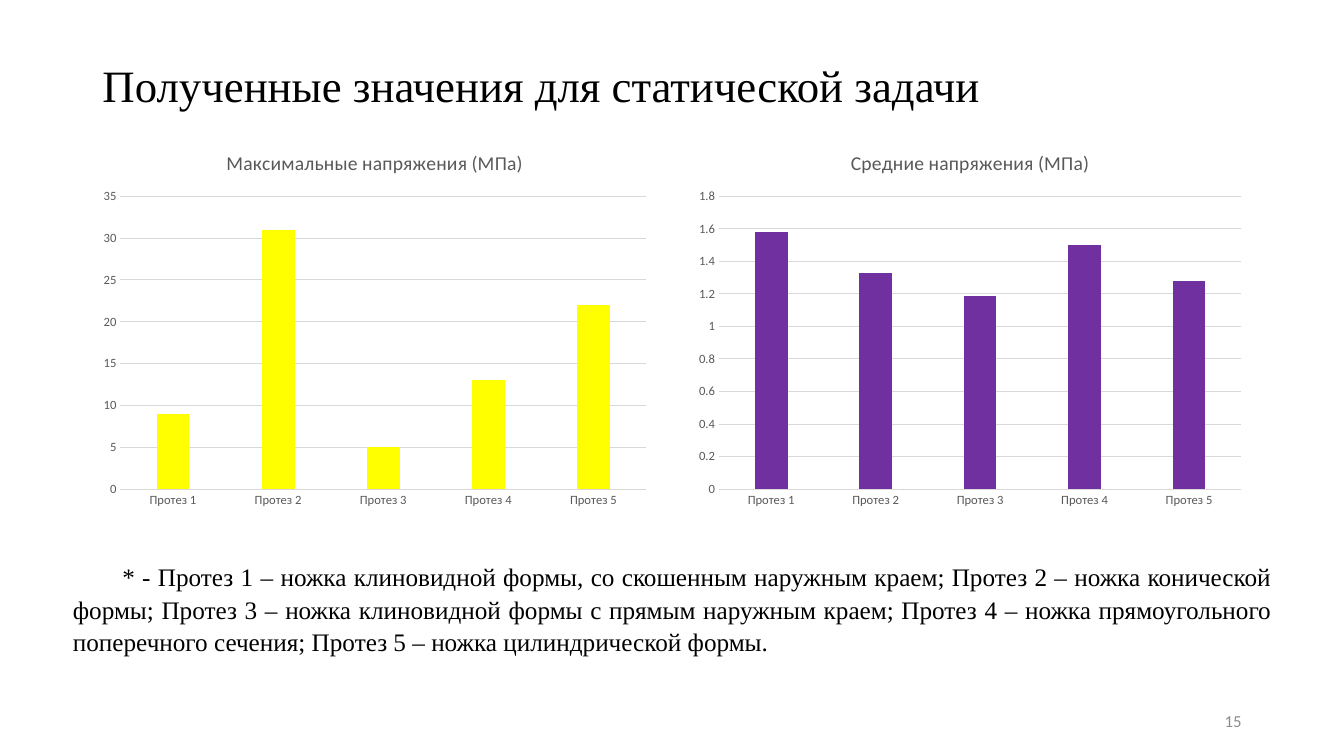
"""Build the slide with static stress results for five prostheses."""
from pptx import Presentation
from pptx import util as u
from pptx.chart.data import CategoryChartData
from pptx.dml.color import RGBColor
from pptx.enum import chart as kinds, text

PX = 9525
COLORS = {"black": "000000", "label": "595959", "grid": "D9D9D9",
          "number": "8C8C8C", "yellow": "FFFF00", "purple": "7030A0"}
SERIF, SANS = "Times New Roman", "Calibri"


def style_font(font, name, size, color):
    for key, value in {"name": name, "size": u.Pt(size), "bold": False}.items():
        setattr(font, key, value)
    font.color.rgb = RGBColor.from_string(COLORS[color])


def write(box, area, words, font, paragraph_format):
    box.left, box.top, box.width, box.height = (side * PX for side in area)
    frame = box.text_frame
    frame.word_wrap = True
    frame.auto_size = text.MSO_AUTO_SIZE.NONE
    frame.vertical_anchor = text.MSO_ANCHOR.MIDDLE
    para = frame.paragraphs[0]
    for key, value in paragraph_format.items():
        setattr(para, key, value)
    span = para.add_run()
    span.text = words
    style_font(span.font, *font)
    return para


deck = Presentation()
deck.slide_width, deck.slide_height = 1280 * PX, 720 * PX
page = deck.slides.add_slide(deck.slide_layouts[5])

write(page.shapes.title, (88, 14, 1104, 139),
      "Полученные значения для статической задачи", (SERIF, 32, "black"),
      {"alignment": text.PP_ALIGN.LEFT, "line_spacing": 0.9})

prostheses = [f"Протез {number}" for number in range(1, 6)]
charts = [
    ("Максимальные напряжения (МПа)", "yellow", 35, 5, (9, 31, 5, 13, 22)),
    ("Средние напряжения (МПа)", "purple", 1.8, 0.2, (1.58, 1.33, 1.19, 1.5, 1.28)),
]
for column, (heading, color, maximum, step, values) in enumerate(charts):
    data = CategoryChartData(number_format="General")
    data.categories = prostheses
    data.add_series(heading, values)
    chart = page.shapes.add_chart(
        kinds.XL_CHART_TYPE.COLUMN_CLUSTERED, (88 + column * 567) * PX, 126 * PX,
        538 * PX, 365 * PX, data).chart
    style_font(chart.font, SANS, 10, "black")
    chart.has_legend = False
    chart.has_title = True
    title = chart.chart_title
    title.include_in_layout = False
    span = title.text_frame.paragraphs[0].add_run()
    span.text = heading
    style_font(span.font, SANS, 14, "label")

    plot = chart.plots[0]
    for key, value in {"gap_width": 219, "overlap": -27, "vary_by_categories": False}.items():
        setattr(plot, key, value)
    fill = plot.series[0].format.fill
    fill.solid()
    fill.fore_color.rgb = RGBColor.from_string(COLORS[color])

    for axis in (chart.category_axis, chart.value_axis):
        axis.major_tick_mark = axis.minor_tick_mark = kinds.XL_TICK_MARK.NONE
        style_font(axis.tick_labels.font, SANS, 9, "label")
    scale = {"minimum_scale": 0, "maximum_scale": maximum, "major_unit": step,
             "has_major_gridlines": True}
    for key, value in scale.items():
        setattr(chart.value_axis, key, value)
    chart.value_axis.format.line.fill.background()
    for line in (chart.category_axis.format.line,
                 chart.value_axis.major_gridlines.format.line):
        line.width = u.Pt(0.75)
        line.color.rgb = RGBColor.from_string(COLORS["grid"])

write(page.shapes.add_textbox(0, 0, 0, 0), (904, 667, 288, 38), "15",
      (SANS, 12, "number"), {"alignment": text.PP_ALIGN.RIGHT})

note = write(
    page.shapes.add_textbox(0, 0, 0, 0), (60, 528, 1161, 102),
    "* - Протез 1 – ножка клиновидной формы, со скошенным наружным краем; "
    "Протез 2 – ножка конической формы; "
    "Протез 3 – ножка клиновидной формы с прямым наружным краем; "
    "Протез 4 – ножка прямоугольного поперечного сечения; "
    "Протез 5 – ножка цилиндрической формы.",
    (SERIF, 18, "black"),
    {"alignment": text.PP_ALIGN.JUSTIFY, "line_spacing": 1.07, "space_after": u.Pt(8)})
note._p.get_or_add_pPr().set("indent", str(47 * PX))
page.shapes[-1].text_frame.vertical_anchor = text.MSO_ANCHOR.TOP

deck.save("out.pptx")
